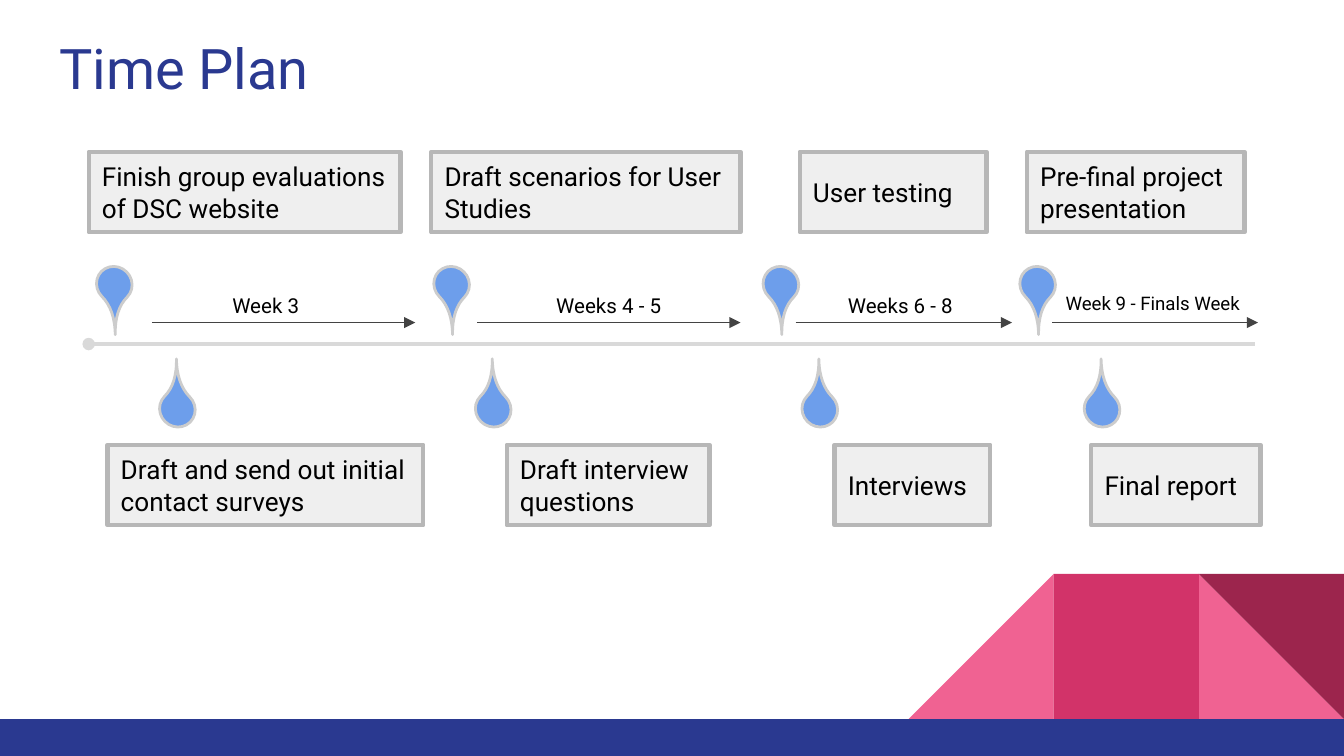
from pptx import Presentation
from pptx.dml.color import RGBColor
from pptx.enum.shapes import MSO_CONNECTOR, MSO_SHAPE
from pptx.enum.text import MSO_ANCHOR, PP_ALIGN
from pptx.oxml.ns import qn
from pptx.util import Inches, Pt
from lxml.etree import SubElement

WIDTH, HEIGHT = Inches(10), Inches(5.625)
CELL = WIDTH / 100
FONT = "Roboto"
COLORS = {
    "navy": "2A3990", "pink": "F06292", "rose": "D23369", "wine": "9C254D",
    "axis": "D9D9D9", "drop": "6D9EEB", "drop_line": "CCCCCC",
    "card": "EFEFEF", "card_line": "B7B7B7", "arrow": "434343", "text": "000000",
}
AXIS_ROW, ARROW_ROW, LABEL_ROW = 25.6, 24, 20.9
UPPER = {"card_row": 11.3, "drop_row": 19.8, "rotation": 135}
LOWER = {"card_row": 33.1, "drop_row": 29.1, "rotation": 315}
CARD_ROWS = 6
DROP_SIZE = (2.6, 2.7)
MILESTONES = [
    (UPPER, 7.2, 6.6, 23.2, "Finish group evaluations of DSC website"),
    (LOWER, 11.9, 8, 23.5, "Draft and send out initial contact surveys"),
    (UPPER, 32.3, 32.1, 23, "Draft scenarios for User Studies"),
    (LOWER, 35.4, 37.7, 15.1, "Draft interview questions"),
    (UPPER, 56.8, 59.5, 13.9, "User testing"),
    (LOWER, 59.7, 62.1, 11.6, "Interviews"),
    (UPPER, 75.9, 76.4, 16.2, "Pre-final project presentation"),
    (LOWER, 80.7, 81.2, 12.6, "Final report"),
]
PERIODS = [
    (11.3, 30.9, 16.3, 11, "Week 3"),
    (35.5, 55.1, 40.4, 11, "Weeks 4 - 5"),
    (59.2, 75.3, 62.1, 11, "Weeks 6 - 8"),
    (78.3, 93.6, 78.3, 10, "Week 9 - Finals Week"),
]


def rgb(name):
    return RGBColor.from_string(COLORS[name])


def cells(*values):
    return [round(v * CELL) for v in values]


def write(sp, text, size, color="text", anchor=MSO_ANCHOR.TOP):
    tf = sp.text_frame
    tf.word_wrap = True
    tf.vertical_anchor = anchor
    tf.margin_left = tf.margin_right = tf.margin_top = tf.margin_bottom = Inches(0.1)
    tf.text = text
    p = tf.paragraphs[0]
    p.alignment = PP_ALIGN.LEFT
    font = p.runs[0].font
    font.name, font.size = FONT, Pt(size)
    font.color.rgb = rgb(color)


def add_block(slide, kind, box, fill, line=None, weight=0, rotation=0):
    sp = slide.shapes.add_shape(kind, *cells(*box))
    sp.shadow.inherit = False
    sp.fill.solid()
    sp.fill.fore_color.rgb = rgb(fill)
    sp.rotation = rotation
    if line:
        sp.line.color.rgb = rgb(line)
        sp.line.width = Pt(weight)
    else:
        sp.line.fill.background()
    return sp


def add_line(slide, x1, x2, y, color, weight, end, kind):
    cxn = slide.shapes.add_connector(MSO_CONNECTOR.STRAIGHT, *cells(x1, y, x2, y))
    cxn.line.color.rgb = rgb(color)
    cxn.line.width = Pt(weight)
    SubElement(cxn.line._get_or_add_ln(), qn(f"a:{end}"), type=kind, w="med", len="med")
    SubElement(cxn._element.spPr, qn("a:effectLst"))


def add_title(slide, text):
    sp = slide.shapes.title
    sp.left, sp.top, sp.width, sp.height = cells(3.4, 1.5, 93.2, 6.3)
    write(sp, text, 30, "navy")


def add_footer(slide):
    side, band = 10.8, 2.75
    top = HEIGHT / CELL - band - side
    corner = 100 - side
    triangle = MSO_SHAPE.RIGHT_TRIANGLE
    parts = [
        (triangle, 0, "pink", 0),
        (triangle, 2, "pink", 270),
        (MSO_SHAPE.RECTANGLE, 1, "rose", 0),
        (triangle, 0, "wine", 180),
    ]
    for kind, steps, fill, rotation in parts:
        box = (corner - steps * side, top, side, side)
        add_block(slide, kind, box, fill, rotation=rotation)
    add_block(slide, MSO_SHAPE.RECTANGLE, (0, top + side, 100, band), "navy")


def add_milestone(slide, row, drop_x, card_x, card_width, text):
    drop = add_block(slide, MSO_SHAPE.TEAR, (drop_x, row["drop_row"], *DROP_SIZE),
                     "drop", "drop_line", 1.5, row["rotation"])
    drop.adjustments[0] = 2
    card = add_block(slide, MSO_SHAPE.RECTANGLE,
                     (card_x, row["card_row"], card_width, CARD_ROWS),
                     "card", "card_line", 2.25)
    write(card, text, 14, anchor=MSO_ANCHOR.MIDDLE)


def add_period(slide, start, end, label_x, size, text):
    add_line(slide, start, end, ARROW_ROW, "arrow", 0.75, "tailEnd", "triangle")
    sp = slide.shapes.add_textbox(*cells(label_x, LABEL_ROW, 15.1, 2.5))
    write(sp, text, size)


def main():
    prs = Presentation()
    prs.slide_width, prs.slide_height = WIDTH, HEIGHT
    slide = prs.slides.add_slide(prs.slide_layouts[5])
    add_footer(slide)
    add_title(slide, "Time Plan")
    add_line(slide, 6.6, 93.4, AXIS_ROW, "axis", 2.25, "headEnd", "oval")
    for milestone in MILESTONES:
        add_milestone(slide, *milestone)
    for period in PERIODS:
        add_period(slide, *period)
    prs.save("out.pptx")


if __name__ == "__main__":
    main()
